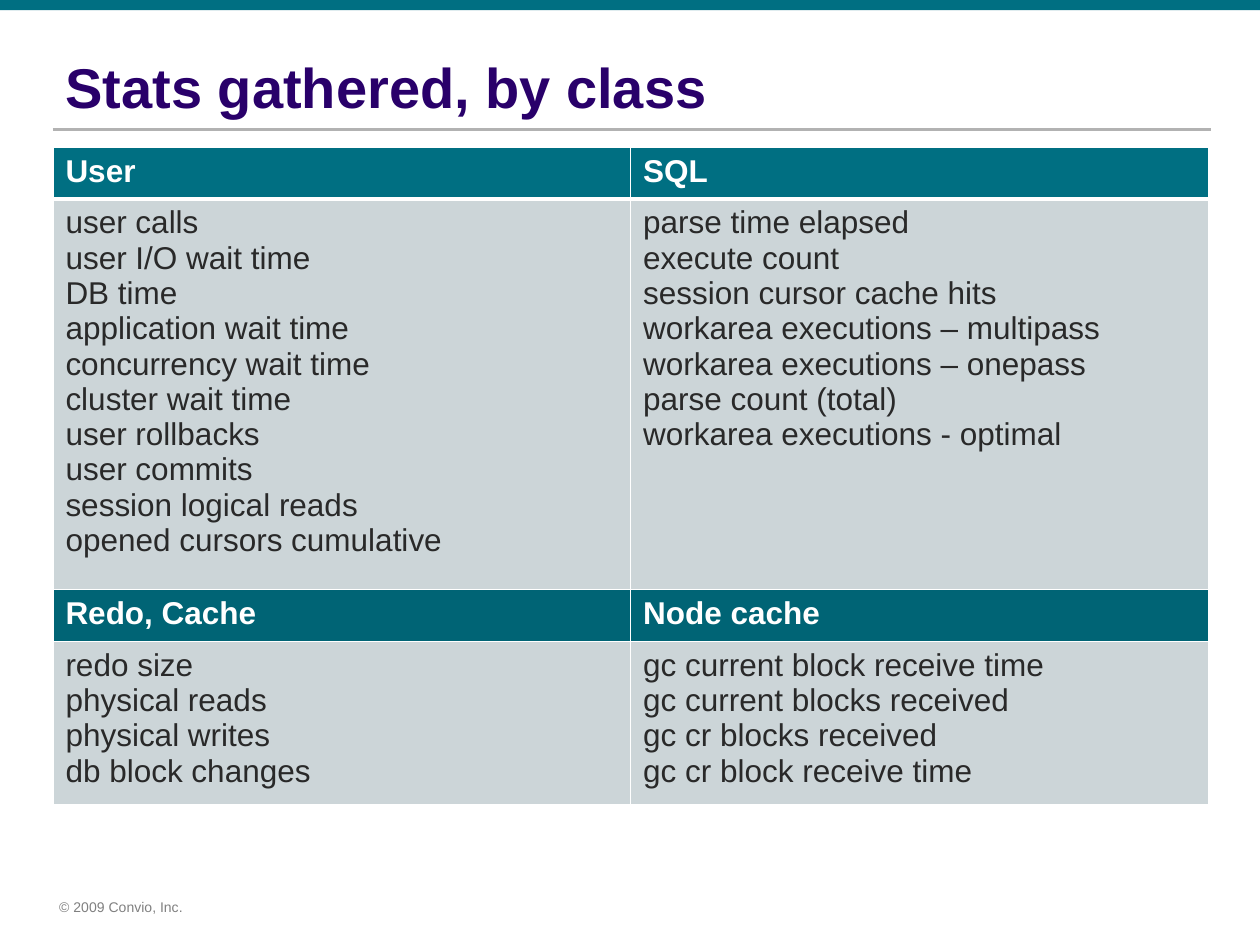
from dataclasses import dataclass

from lxml.etree import SubElement
from pptx import Presentation
from pptx.dml.color import RGBColor
from pptx.enum.shapes import MSO_CONNECTOR, MSO_SHAPE
from pptx.enum.text import MSO_ANCHOR, PP_ALIGN
from pptx.oxml import parse_xml
from pptx.oxml.ns import nsdecls, qn
from pptx.util import Inches, Pt


@dataclass(frozen=True)
class Theme:
    font: str = "Arial"
    teal: str = "006F82"
    dark_teal: str = "006475"
    purple: str = "29006A"
    ink: str = "292929"
    white: str = "FFFFFF"
    panel: str = "CCD5D8"
    rule: str = "B2B2B2"
    grey: str = "808080"
    title_size: int = 32
    table_size: int = 18
    footer_size: int = 8


@dataclass(frozen=True)
class StatClass:
    name: str
    stats: tuple[str, ...]


@dataclass(frozen=True)
class Band:
    classes: tuple[StatClass, StatClass]
    header_fill: str
    header_rule: int


THEME = Theme()
LEFT, WIDTH = 0.42, 9.17
ROW_HEIGHT = 0.41  # minimum; rows grow with their text

BANDS = (
    Band((
        StatClass("User", (
            "user calls", "user I/O wait time", "DB time",
            "application wait time", "concurrency wait time",
            "cluster wait time", "user rollbacks", "user commits",
            "session logical reads", "opened cursors cumulative")),
        StatClass("SQL", (
            "parse time elapsed", "execute count",
            "session cursor cache hits", "workarea executions – multipass",
            "workarea executions – onepass", "parse count (total)",
            "workarea executions - optimal")),
    ), THEME.teal, 3),
    Band((
        StatClass("Redo, Cache", (
            "redo size", "physical reads", "physical writes",
            "db block changes")),
        StatClass("Node cache", (
            "gc current block receive time", "gc current blocks received",
            "gc cr blocks received", "gc cr block receive time")),
    ), THEME.dark_teal, 1),
)


def add_run(paragraph, text: str, size: int, color: str, bold: bool = False) -> None:
    run = paragraph.add_run()
    run.text = text
    run.font.name = THEME.font
    run.font.size = Pt(size)
    run.font.bold = bold
    run.font.color.rgb = RGBColor.from_string(color)


def set_borders(cell, top: int = 1, bottom: int = 1) -> None:
    properties = cell._tc.get_or_add_tcPr()
    widths = {"lnL": 1, "lnR": 1, "lnT": top, "lnB": bottom}
    for position, (side, width) in enumerate(widths.items()):
        properties.insert(position, parse_xml(
            f'<a:{side} {nsdecls("a")} w="{Pt(width)}"><a:solidFill>'
            f'<a:srgbClr val="{THEME.white}"/></a:solidFill></a:{side}>'))


def fill_cell(cell, lines: tuple[str, ...], fill: str, color: str,
              bold: bool = False, top: int = 1, bottom: int = 1) -> None:
    cell.fill.solid()
    cell.fill.fore_color.rgb = RGBColor.from_string(fill)
    set_borders(cell, top, bottom)
    frame = cell.text_frame
    for index, line in enumerate(lines):
        paragraph = frame.add_paragraph() if index else frame.paragraphs[0]
        add_run(paragraph, line, THEME.table_size, color, bold)


def add_frame(slide) -> None:
    # Top bar
    bar = slide.shapes.add_shape(MSO_SHAPE.RECTANGLE, 0, 0, Inches(10), Inches(0.08))
    bar.shadow.inherit = False
    bar.fill.solid()
    bar.fill.fore_color.rgb = RGBColor.from_string(THEME.teal)
    bar.line.fill.background()

    # Copyright line
    footer = slide.shapes.add_textbox(
        Inches(LEFT), Inches(7.08), Inches(1.15), Inches(0.24)).text_frame
    footer.word_wrap = False
    footer.margin_left = Inches(0.05)
    add_run(footer.paragraphs[0], "© 2009 Convio, Inc.", THEME.footer_size, THEME.grey)

    # Rule under the title
    rule = slide.shapes.add_connector(
        MSO_CONNECTOR.STRAIGHT, Inches(LEFT), Inches(1.03), Inches(9.61), Inches(1.03))
    rule.line.color.rgb = RGBColor.from_string(THEME.rule)
    rule.line.width = Pt(1.5)
    SubElement(rule._element.spPr, qn("a:effectLst"))


def add_title(slide, text: str) -> None:
    title = slide.shapes.title
    title.left, title.top = Inches(LEFT), Inches(0.37)
    title.width, title.height = Inches(WIDTH), Inches(0.63)
    title.text_frame.vertical_anchor = MSO_ANCHOR.BOTTOM
    paragraph = title.text_frame.paragraphs[0]
    paragraph.alignment = PP_ALIGN.LEFT
    add_run(paragraph, text, THEME.title_size, THEME.purple, bold=True)


def add_stats_table(slide, bands: tuple[Band, ...]) -> None:
    row_count = 2 * len(bands)
    graphic = slide.shapes.add_table(
        row_count, 2, Inches(LEFT), Inches(1.17),
        Inches(WIDTH), Inches(ROW_HEIGHT * row_count))
    graphic.height = Inches(5.21)
    table = graphic.table
    for index, band in enumerate(bands):
        header_row, stats_row = 2 * index, 2 * index + 1
        for column, group in enumerate(band.classes):
            fill_cell(table.cell(header_row, column), (group.name,),
                      band.header_fill, THEME.white, True, bottom=band.header_rule)
            fill_cell(table.cell(stats_row, column), group.stats,
                      THEME.panel, THEME.ink, top=band.header_rule)


def main() -> None:
    presentation = Presentation()
    presentation.slide_width, presentation.slide_height = Inches(10), Inches(7.5)
    slide = presentation.slides.add_slide(presentation.slide_layouts[5])
    add_frame(slide)
    add_title(slide, "Stats gathered, by class")
    add_stats_table(slide, BANDS)
    presentation.save("out.pptx")


if __name__ == "__main__":
    main()
